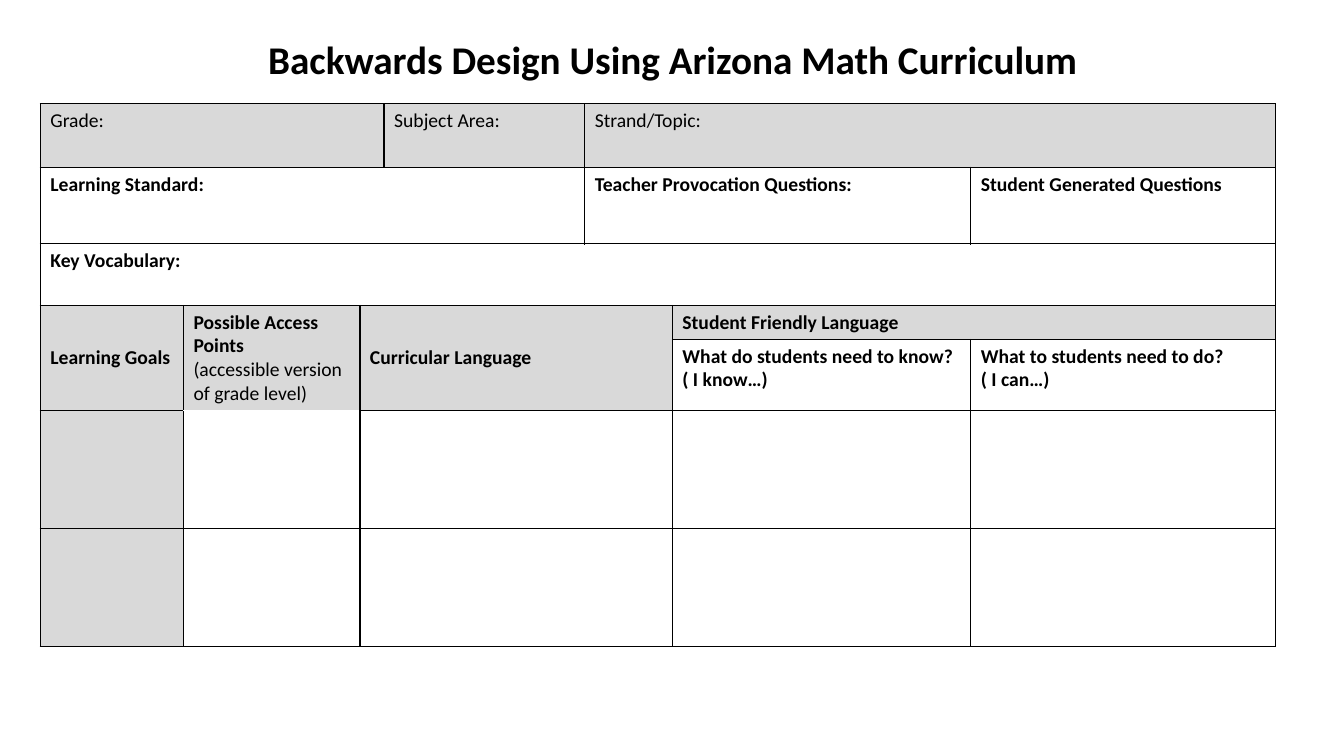
from lxml.etree import SubElement
from pptx import Presentation
from pptx.dml.color import RGBColor
from pptx.enum.text import MSO_ANCHOR, MSO_AUTO_SIZE, PP_ALIGN
from pptx.oxml.ns import qn
from pptx.util import Inches, Pt

GREY, WHITE, BLACK = "D9D9D9", "FFFFFF", "000000"
TOP, MIDDLE = MSO_ANCHOR.TOP, MSO_ANCHOR.MIDDLE


def color(value):
    return RGBColor.from_string(value)


def write(paragraph, text, size, bold):
    run = paragraph.add_run()
    run.text = text
    font_format = {"name": "Calibri", "size": Pt(size), "bold": bold}
    for attribute, value in font_format.items():
        setattr(run.font, attribute, value)
    run.font.color.rgb = color(BLACK)


presentation = Presentation()
presentation.slide_width = Inches(13.33)
presentation.slide_height = Inches(7.5)
slide = presentation.slides.add_slide(presentation.slide_layouts[6])

column_widths = [1.42, 1.75, 0.13, 1.99, 0.87, 2.96, 3.02]
row_heights = [0.63, 0.76, 0.61, 0.33, 0.7, 1.17, 1.17]
table = slide.shapes.add_table(
    len(row_heights), len(column_widths), Inches(0.4), Inches(1.03),
    Inches(sum(column_widths)), Inches(sum(row_heights)),
).table
table.first_row = False
table.horz_banding = False
for column, width in zip(table.columns, column_widths):
    column.width = Inches(width)
for row, height in zip(table.rows, row_heights):
    row.height = Inches(height)

# row, column, row span, column span, fill, anchor, lines of (text, bold)
areas = [
    (0, 0, 1, 3, GREY, TOP, [("Grade:", False)]),
    (0, 3, 1, 1, GREY, TOP, [("Subject Area:", False)]),
    (0, 4, 1, 3, GREY, TOP, [("Strand/Topic:", False)]),
    (1, 0, 1, 4, WHITE, TOP, [("Learning Standard:", True)]),
    (1, 4, 1, 2, WHITE, TOP, [("Teacher Provocation Questions:", True)]),
    (1, 6, 1, 1, WHITE, TOP, [("Student Generated Questions", True)]),
    (2, 0, 1, 7, WHITE, TOP, [("Key Vocabulary:", True)]),
    (3, 0, 2, 1, GREY, MIDDLE, [("Learning Goals", True)]),
    (3, 1, 2, 1, GREY, MIDDLE, [("Possible Access Points", True),
                                ("(accessible version of grade level)", False)]),
    (3, 2, 2, 3, GREY, MIDDLE, [("Curricular Language", True)]),
    (3, 5, 1, 2, GREY, MIDDLE, [("Student Friendly Language", True)]),
    (4, 5, 1, 1, WHITE, TOP, [("What do students need to know?", True), ("( I know…)", True)]),
    (4, 6, 1, 1, WHITE, TOP, [("What to students need to do?", True), ("( I can…)", True)]),
]
for goal_row in (5, 6):
    areas.append((goal_row, 0, 1, 1, GREY, TOP, []))
    areas.append((goal_row, 2, 1, 3, WHITE, TOP, []))
    for column_index in (1, 5, 6):
        areas.append((goal_row, column_index, 1, 1, WHITE, TOP, []))

white_edges = {(3, 1, "lnB"), (4, 1, "lnB"), (5, 1, "lnT")}
for top, left, row_span, column_span, fill, anchor, lines in areas:
    origin = table.cell(top, left)
    if row_span * column_span > 1:
        origin.merge(table.cell(top + row_span - 1, left + column_span - 1))
    origin.vertical_anchor = anchor
    for index, (text, bold) in enumerate(lines):
        frame = origin.text_frame
        paragraph = frame.add_paragraph() if index else frame.paragraphs[0]
        write(paragraph, text, 14, bold)
    for row_index in range(top, top + row_span):
        for column_index in range(left, left + column_span):
            cell = table.cell(row_index, column_index)
            properties = cell._tc.get_or_add_tcPr()
            for edge in ("lnL", "lnR", "lnT", "lnB"):
                line = SubElement(properties, qn(f"a:{edge}"), w=str(Pt(1)))
                line_fill = SubElement(line, qn("a:solidFill"))
                is_white = (row_index, column_index, edge) in white_edges
                SubElement(line_fill, qn("a:srgbClr"), val=WHITE if is_white else BLACK)
            cell.fill.solid()
            cell.fill.fore_color.rgb = color(fill)

title = slide.shapes.add_textbox(Inches(2.51), Inches(0.3), Inches(8.32), Inches(0.57))
title_format = {"word_wrap": False, "auto_size": MSO_AUTO_SIZE.SHAPE_TO_FIT_TEXT}
for attribute, value in title_format.items():
    setattr(title.text_frame, attribute, value)
paragraph = title.text_frame.paragraphs[0]
paragraph.alignment = PP_ALIGN.CENTER
write(paragraph, "Backwards Design Using Arizona Math Curriculum", 28, True)

presentation.save("out.pptx")
